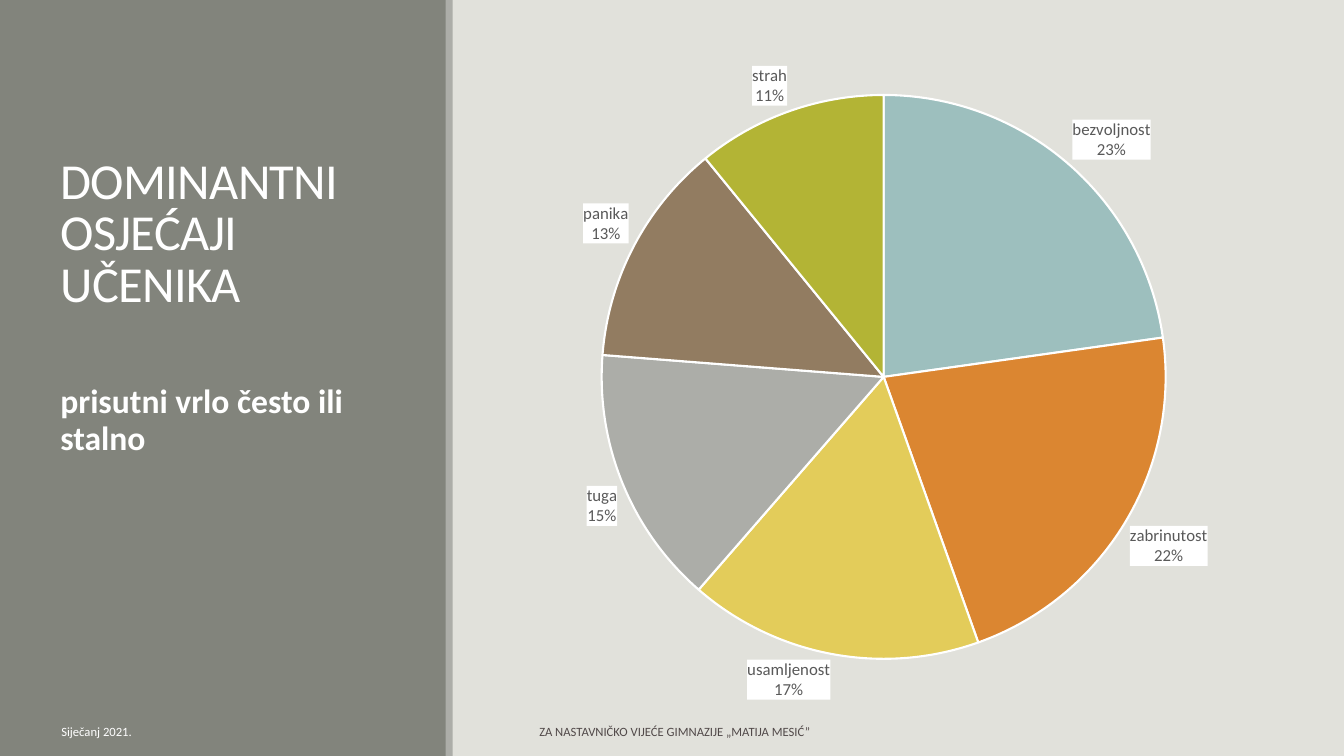
from dataclasses import dataclass

import lxml.etree
import pptx
import pptx.chart.data
import pptx.dml.color
import pptx.enum.chart
import pptx.enum.shapes
import pptx.enum.text
import pptx.oxml
import pptx.oxml.ns
import pptx.util

Inches = pptx.util.Inches
Pt = pptx.util.Pt
Anchor = pptx.enum.text.MSO_ANCHOR

FONT = "Calibri"
COLORS = {
    "background": "E1E1DB",
    "panel": "82847C",
    "edge": "ACADA8",
    "white": "FFFFFF",
    "footer": "514949",
    "label": "595959",
}


@dataclass
class Band:
    left: float
    width: float
    color: str


@dataclass
class TextBlock:
    text: str
    left: float
    top: float
    width: float
    height: float
    size: float
    color: str
    bold: bool = False
    anchor: Anchor = Anchor.MIDDLE
    line_spacing: float = 1.0


@dataclass
class Feeling:
    name: str
    percent: int
    color: str


BANDS = [Band(0, 4.43, "panel"), Band(4.42, 0.07, "edge")]
TITLE = TextBlock("DOMINANTNI OSJEĆAJI UČENIKA", 0.5, 0.65, 3.5, 2.5, 36, "white",
                  anchor=Anchor.BOTTOM, line_spacing=0.85)
TEXT_BLOCKS = [
    TextBlock("prisutni vrlo često ili stalno", 0.5, 3.77, 3.5, 3.13, 24, "white",
              bold=True, anchor=Anchor.TOP, line_spacing=0.9),
    TextBlock("Siječanj 2021.", 0.51, 7.06, 2.86, 0.4, 9, "white"),
    TextBlock("ZA NASTAVNIČKO VIJEĆE GIMNAZIJE „MATIJA MESIĆ”",
              5.25, 7.06, 5.08, 0.4, 9, "footer"),
]
FEELINGS = [
    Feeling("bezvoljnost", 23, "9DBFBE"),
    Feeling("zabrinutost", 22, "DB8631"),
    Feeling("usamljenost", 17, "E3CC5A"),
    Feeling("tuga", 15, "ACADA8"),
    Feeling("panika", 13, "927C61"),
    Feeling("strah", 11, "B3B435"),
]
# Pie area as fractions of the chart frame
PIE_LAYOUT = {"x": 0.16, "y": 0.08, "w": 0.66, "h": 0.84}


def rgb(value: str) -> pptx.dml.color.RGBColor:
    return pptx.dml.color.RGBColor.from_string(value)


def add_band(slide, band: Band):
    shape = slide.shapes.add_shape(
        pptx.enum.shapes.MSO_SHAPE.RECTANGLE,
        Inches(band.left), Inches(0), Inches(band.width), Inches(7.5))
    shape.shadow.inherit = False
    shape.fill.solid()
    shape.fill.fore_color.rgb = rgb(COLORS[band.color])
    shape.line.fill.background()
    return shape


def write_text(shape, block: TextBlock):
    """Place a text shape and fill it with one formatted run."""
    shape.left, shape.top = Inches(block.left), Inches(block.top)
    shape.width, shape.height = Inches(block.width), Inches(block.height)
    frame = shape.text_frame
    frame.word_wrap = True
    frame.auto_size = pptx.enum.text.MSO_AUTO_SIZE.NONE
    frame.vertical_anchor = block.anchor
    paragraph = frame.paragraphs[0]
    paragraph.alignment = pptx.enum.text.PP_ALIGN.LEFT
    paragraph.line_spacing = block.line_spacing
    paragraph.space_before = Pt(0)
    run = paragraph.add_run()
    run.text = block.text
    run.font.name = FONT
    run.font.size = Pt(block.size)
    run.font.bold = block.bold
    run.font.color.rgb = rgb(COLORS[block.color])
    return run


def add_feelings_pie(slide) -> None:
    data = pptx.chart.data.CategoryChartData()
    data.categories = [feeling.name for feeling in FEELINGS]
    data.add_series("Series 1", [feeling.percent for feeling in FEELINGS])
    chart = slide.shapes.add_chart(
        pptx.enum.chart.XL_CHART_TYPE.PIE,
        Inches(4.6), Inches(0.41), Inches(8.5), Inches(6.66), data).chart
    chart.has_title = False
    chart.has_legend = False
    chart.font.name = FONT
    chart.font.size = Pt(10)

    # Slices
    plot = chart.plots[0]
    plot.vary_by_categories = True
    series = plot.series[0]
    for index, feeling in enumerate(FEELINGS):
        slice_format = series.points[index].format
        slice_format.fill.solid()
        slice_format.fill.fore_color.rgb = rgb(feeling.color)
        slice_format.line.color.rgb = rgb(COLORS["white"])
        slice_format.line.width = Pt(1.5)

    # Labels: name above percentage, on white
    labels = series.data_labels
    labels.show_category_name = True
    labels.show_percentage = True
    labels.show_value = False
    labels.number_format = "0%"
    labels.number_format_is_linked = False
    labels.position = pptx.enum.chart.XL_LABEL_POSITION.OUTSIDE_END
    labels.font.name = FONT
    labels.font.size = Pt(12)
    labels.font.color.rgb = rgb(COLORS["label"])
    qn = pptx.oxml.ns.qn
    label_list = chart.element.find(".//" + qn("c:ser")).find(qn("c:dLbls"))
    background = pptx.oxml.parse_xml(
        f'<c:spPr {pptx.oxml.ns.nsdecls("c", "a")}><a:solidFill>'
        f'<a:srgbClr val="{COLORS["white"]}"/></a:solidFill></c:spPr>')
    label_list.find(qn("c:txPr")).addprevious(background)
    separator = lxml.etree.Element(qn("c:separator"))
    separator.text = "\n"
    label_list.find(qn("c:showPercent")).addnext(separator)
    bubble_size = label_list.find(qn("c:showBubbleSize"))
    if bubble_size is not None:
        bubble_size.addnext(separator)

    # Fixed pie area
    plot_area = chart.element.find(".//" + qn("c:plotArea"))
    for old_layout in plot_area.findall(qn("c:layout")):
        plot_area.remove(old_layout)
    layout = lxml.etree.Element(qn("c:layout"))
    manual = lxml.etree.SubElement(layout, qn("c:manualLayout"))
    settings = {"layoutTarget": "inner", "xMode": "edge", "yMode": "edge", **PIE_LAYOUT}
    for tag, value in settings.items():
        lxml.etree.SubElement(manual, qn(f"c:{tag}")).set("val", str(value))
    plot_area.insert(0, layout)


def main() -> None:
    presentation = pptx.Presentation()
    presentation.slide_width = Inches(13.33)
    presentation.slide_height = Inches(7.5)
    slide = presentation.slides.add_slide(presentation.slide_layouts[5])
    slide.background.fill.solid()
    slide.background.fill.fore_color.rgb = rgb(COLORS["background"])

    # Side panel, behind the title
    title = slide.shapes.title
    for band in BANDS:
        title.element.addprevious(add_band(slide, band).element)

    # Title with slightly tightened letters
    title_run = write_text(title, TITLE)
    title_run.font._element.set("spc", "-50")

    add_feelings_pie(slide)

    # Subtitle and footer
    for block in TEXT_BLOCKS:
        box = slide.shapes.add_textbox(0, 0, 0, 0)
        write_text(box, block)

    presentation.save("out.pptx")


if __name__ == "__main__":
    main()
